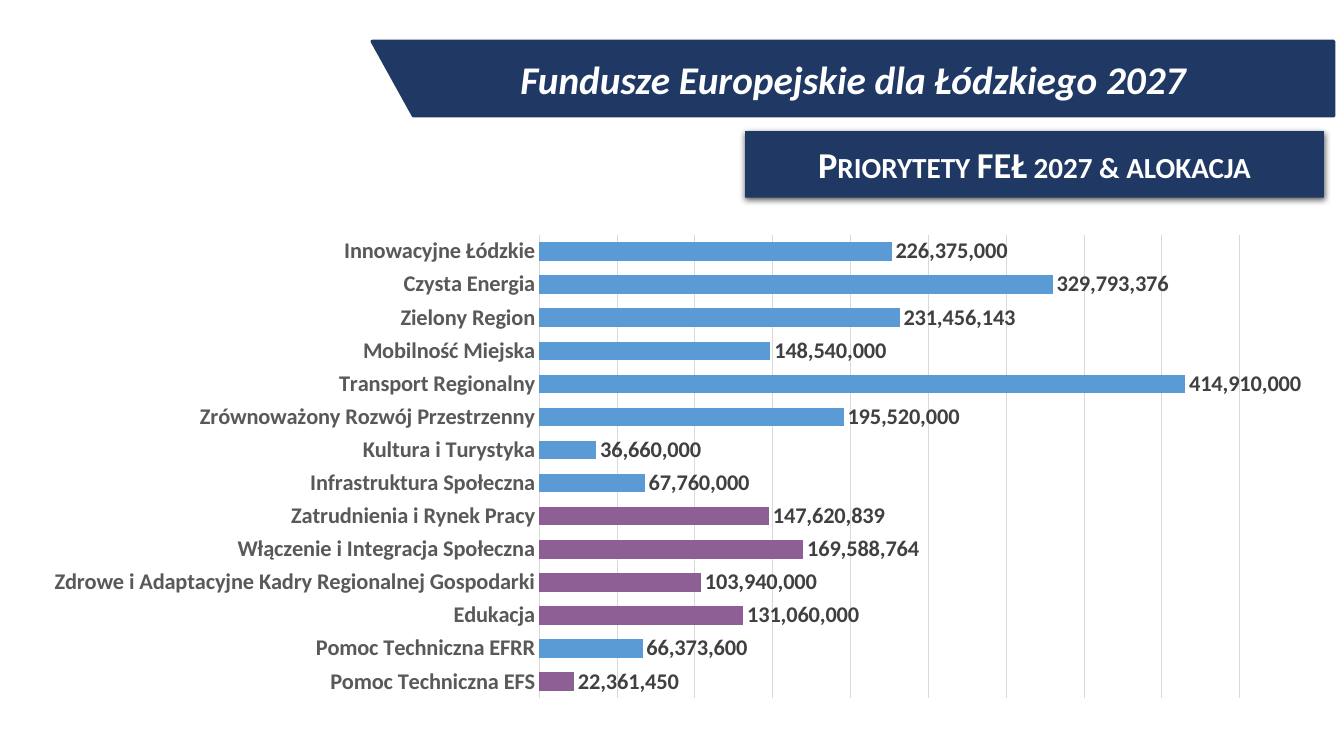
from lxml import etree
from pptx import Presentation
from pptx.chart.data import CategoryChartData
from pptx.dml.color import RGBColor
from pptx.enum.chart import XL_CHART_TYPE as ChartType, XL_LABEL_POSITION as LabelPosition
from pptx.enum.chart import XL_TICK_LABEL_POSITION as TickLabels, XL_TICK_MARK as TickMark
from pptx.enum.text import MSO_ANCHOR, MSO_AUTO_SIZE, PP_ALIGN
from pptx.oxml import parse_xml
from pptx.oxml.ns import qn
from pptx.util import Inches, Pt

NAVY, BLUE, PURPLE, GRID = "203864", "5B9BD5", "8E5F95", "D9D9D9"
PRIORITIES = [
    ("Innowacyjne Łódzkie", 226375000, BLUE),
    ("Czysta Energia", 329793376, BLUE),
    ("Zielony Region", 231456143, BLUE),
    ("Mobilność Miejska", 148540000, BLUE),
    ("Transport Regionalny", 414910000, BLUE),
    ("Zrównoważony Rozwój Przestrzenny", 195520000, BLUE),
    ("Kultura i Turystyka", 36660000, BLUE),
    ("Infrastruktura Społeczna", 67760000, BLUE),
    ("Zatrudnienia i Rynek Pracy", 147620839, PURPLE),
    ("Włączenie i Integracja Społeczna", 169588764, PURPLE),
    ("Zdrowe i Adaptacyjne Kadry Regionalnej Gospodarki", 103940000, PURPLE),
    ("Edukacja", 131060000, PURPLE),
    ("Pomoc Techniczna EFRR", 66373600, BLUE),
    ("Pomoc Techniczna EFS", 22361450, PURPLE),
]


def color(hex_code):
    return RGBColor.from_string(hex_code)


def style_heading(box, text, size):
    """Fill a box with navy and centre bold white text in it."""
    box.fill.solid()
    box.fill.fore_color.rgb = color(NAVY)
    frame = box.text_frame
    frame.text = text
    frame.word_wrap = True
    frame.auto_size = MSO_AUTO_SIZE.NONE
    frame.vertical_anchor = MSO_ANCHOR.MIDDLE
    para = frame.paragraphs[0]
    para.alignment = PP_ALIGN.CENTER
    para.font.name = "Calibri"
    para.font.size = Pt(size)
    para.font.bold = True
    para.font.color.rgb = color("FFFFFF")
    return para


deck = Presentation()
deck.slide_width, deck.slide_height = Inches(13.33), Inches(7.5)
page = deck.slides.add_slide(deck.slide_layouts[5])

# Programme banner with a slanted left edge
outline = page.shapes.build_freeform(Inches(3.69), Inches(0.41))
outline.add_line_segments(
    [(Inches(x), Inches(y)) for x, y in [(13.23, 0.41), (13.23, 1.15), (4.1, 1.15)]], close=True
)
banner = outline.convert_to_shape()
banner.shadow.inherit = False
banner.line.color.rgb = color(NAVY)
banner.line.width = Pt(2.25)
style_heading(banner, "Fundusze Europejskie dla Łódzkiego 2027", 28).font.italic = True

# Slide title in small capitals, with a soft shadow below
title = page.shapes.title
title.left, title.top, title.width, title.height = Inches(7.39), Inches(1.3), Inches(5.74), Inches(0.66)
heading = style_heading(title, "Priorytety FEŁ 2027 & alokacja", 26)
heading.runs[0].font._element.set("cap", "small")
title.line.fill.background()
title._element.spPr.append(parse_xml(
    '<a:effectLst xmlns:a="http://schemas.openxmlformats.org/drawingml/2006/main">'
    f'<a:outerShdw blurRad="{Pt(4.5)}" dist="{Pt(1.5)}" dir="5400000" algn="t" rotWithShape="0">'
    '<a:srgbClr val="000000"><a:alpha val="63000"/></a:srgbClr></a:outerShdw></a:effectLst>'
))

# Allocation chart
allocation = CategoryChartData(number_format="#,##0")
allocation.categories = [name for name, _, _ in PRIORITIES]
allocation.add_series("Series 1", [value for _, value, _ in PRIORITIES])
chart = page.shapes.add_chart(
    ChartType.BAR_CLUSTERED, Inches(0.4), Inches(2.18), Inches(12.59), Inches(4.9), allocation
).chart
chart.has_legend = False
chart.has_title = False
chart.font.name = "Calibri"
chart.font.size = Pt(10)
chart.font.color.rgb = color("000000")

names = chart.category_axis
names.reverse_order = True
names.major_tick_mark = TickMark.NONE
names.format.line.color.rgb = color(GRID)
names.format.line.width = Pt(0.75)

amounts = chart.value_axis
amounts.minimum_scale, amounts.maximum_scale, amounts.major_unit = 0, 450000000, 50000000
amounts.major_tick_mark = TickMark.NONE
amounts.tick_label_position = TickLabels.NONE
amounts.format.line.fill.background()
amounts.major_gridlines.format.line.color.rgb = color(GRID)
amounts.major_gridlines.format.line.width = Pt(0.75)

plot = chart.plots[0]
plot.gap_width = 79
plot.vary_by_categories = False
bars = plot.series[0]
bars.invert_if_negative = False
bars.format.fill.solid()
bars.format.fill.fore_color.rgb = color(BLUE)
for index, (_, _, shade) in enumerate(PRIORITIES):
    if shade != BLUE:
        fill = bars.points[index].format.fill
        fill.solid()
        fill.fore_color.rgb = color(shade)

labels = bars.data_labels
labels.show_value = True
labels.number_format = "#,##0"
labels.number_format_is_linked = False
labels.position = LabelPosition.OUTSIDE_END
for font, shade in [(names.tick_labels.font, "595959"), (labels.font, "404040")]:
    font.name = "Calibri"
    font.size = Pt(16)
    font.bold = True
    font.color.rgb = color(shade)

# Fixed plot area, as fractions of the chart
plot_area = chart._chartSpace.chart.plotArea
for old_layout in plot_area.findall(qn("c:layout")):
    plot_area.remove(old_layout)
layout = etree.Element(qn("c:layout"))
manual = etree.SubElement(layout, qn("c:manualLayout"))
for tag, value in [("layoutTarget", "inner"), ("xMode", "edge"), ("yMode", "edge"),
                   ("x", 0.393), ("y", 0.031), ("w", 0.552), ("h", 0.938)]:
    etree.SubElement(manual, qn(f"c:{tag}")).set("val", str(value))
plot_area.insert(0, layout)

deck.save("out.pptx")
